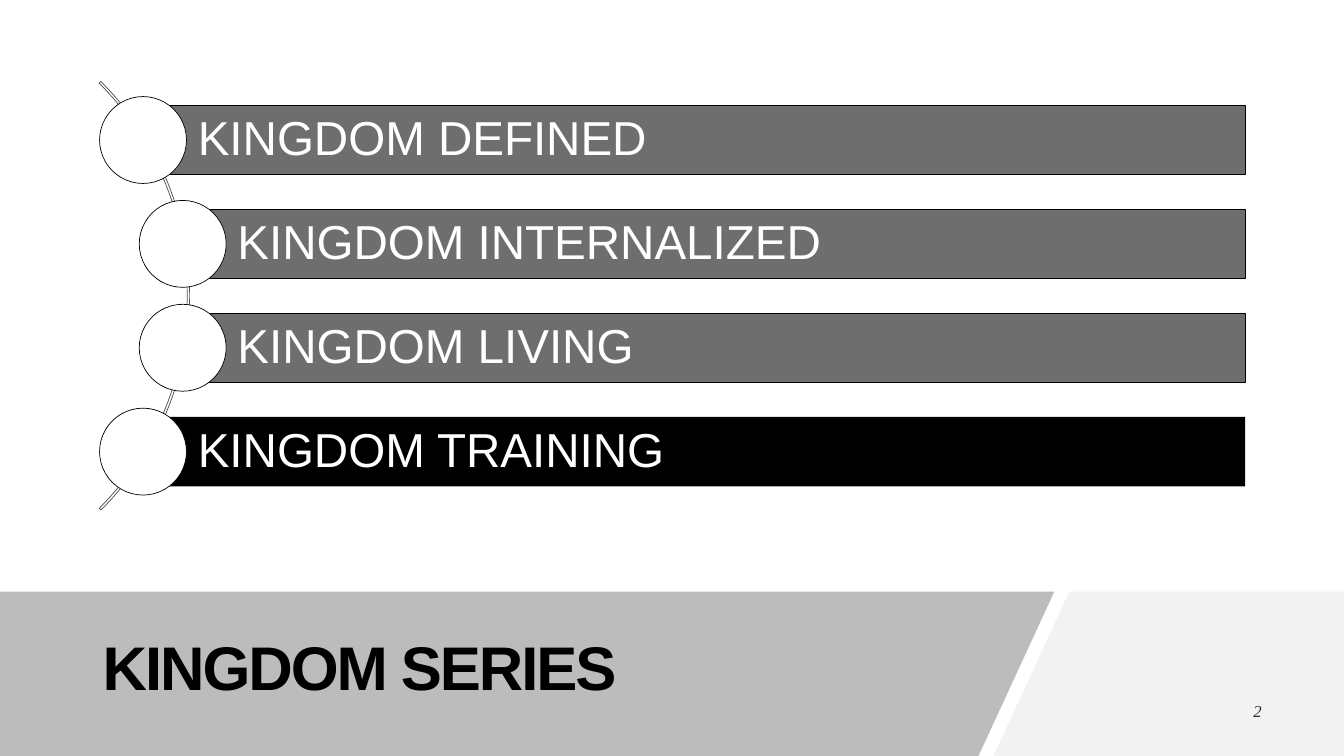
from pptx import Presentation
from pptx.dml.color import RGBColor
from pptx.enum.shapes import MSO_SHAPE as Preset
from pptx.enum.text import MSO_ANCHOR as Anchor, PP_ALIGN as Align
from pptx.oxml.ns import qn
from pptx.util import Cm, Pt
from lxml.etree import SubElement

BLACK = RGBColor(0x00, 0x00, 0x00)
WHITE = RGBColor(0xFF, 0xFF, 0xFF)
BAR_GRAY = RGBColor(0x6E, 0x6E, 0x6E)
ARC_GRAY = RGBColor(0x4D, 0x4D, 0x4D)
BAND_GRAY = RGBColor(0x59, 0x59, 0x59)
CORNER_GRAY = RGBColor(0xF2, 0xF2, 0xF2)

PAGE_WIDTH, PAGE_HEIGHT = 33.87, 19.05
TOPICS = ["KINGDOM DEFINED", "KINGDOM INTERNALIZED", "KINGDOM LIVING", "KINGDOM TRAINING"]


def set_alpha(fill_owner, percent):
    color = next(fill_owner.iter(qn("a:srgbClr")))
    SubElement(color, qn("a:alpha"), val=str(percent * 1000))


def style_shape(shape, fill=None, line=None, width=0.5):
    shape.shadow.inherit = False
    if fill is None:
        shape.fill.background()
    else:
        shape.fill.solid()
        shape.fill.fore_color.rgb = fill
    if line is None:
        shape.line.fill.background()
    else:
        shape.line.color.rgb = line
        shape.line.width = Pt(width)


def write_text(shape, text, size, color, font="Arial", align=Align.LEFT):
    frame = shape.text_frame
    frame.word_wrap = True
    frame.vertical_anchor = Anchor.MIDDLE
    frame.text = text
    para = frame.paragraphs[0]
    para.alignment = align
    para.line_spacing = 0.9
    span = para.runs[0]
    span.font.name = font
    span.font.size = Pt(size)
    span.font.color.rgb = color
    return span


def add_polygon(page, points, fill):
    corners = [(Cm(x), Cm(y)) for x, y in points]
    builder = page.shapes.build_freeform(*corners[0])
    builder.add_line_segments(corners[1:], close=True)
    shape = builder.convert_to_shape()
    style_shape(shape, fill)
    return shape


def add_footer(page, left, top, width, height):
    right, bottom = left + width, top + height
    slant, gap, band_right = 1.91, 0.38, left + 26.57

    # Pale corner and translucent title band with parallel slanted edges
    corner_left = band_right + gap
    add_polygon(page, [(corner_left, top), (right, top), (right, bottom),
                       (corner_left - slant, bottom)], CORNER_GRAY)
    band = add_polygon(page, [(left, top), (band_right, top),
                              (band_right - slant, bottom), (left, bottom)], BAND_GRAY)
    set_alpha(band.fill._xPr, 40)

    # Title
    title = page.shapes.add_textbox(Cm(left + 2.34), Cm(top + 0.46), Cm(22.43), Cm(3.05))
    span = write_text(title, "KINGDOM SERIES", 44, BLACK)
    span.font.bold = True
    span.font._element.set("spc", "-150")

    # Page number
    number = page.shapes.add_textbox(Cm(right - 5.55), Cm(top + 2.49), Cm(3.73), Cm(1.02))
    span = write_text(number, "2", 12, BLACK, "Times New Roman", Align.RIGHT)
    span.font.italic = True
    set_alpha(span.font._element, 80)
    number.text_frame.paragraphs[0].line_spacing = 1.0


def add_topic_list(page, left, top, width, height):
    pitch = height / len(TOPICS)
    bar_height, dot_size, inner_shift = 1.75, 2.19, 1.0
    right = left + width

    # Arc that links the circles
    arc_size = 15.27
    arc = page.shapes.add_shape(Preset.BLOCK_ARC, Cm(left - 13.0),
                                Cm(top + (height - arc_size) / 2), Cm(arc_size), Cm(arc_size))
    for index, value in enumerate((189, 27, 0.004)):
        arc.adjustments[index] = value
    style_shape(arc, line=ARC_GRAY)

    # Bars, each with a circle centred on its left end
    for index, topic in enumerate(TOPICS):
        is_last = index == len(TOPICS) - 1
        is_outer = index == 0 or is_last
        center_x = left + dot_size / 2 + (0 if is_outer else inner_shift)
        center_y = top + (index + 0.5) * pitch

        bar = page.shapes.add_shape(Preset.RECTANGLE, Cm(center_x), Cm(center_y - bar_height / 2),
                                    Cm(right - center_x), Cm(bar_height))
        if is_last:
            style_shape(bar, BLACK)
        else:
            style_shape(bar, BAR_GRAY, BLACK, 0.75)
        write_text(bar, topic, 34, WHITE)
        frame = bar.text_frame
        frame.margin_left = Cm(1.38)
        frame.margin_right = frame.margin_top = frame.margin_bottom = Cm(0.23)

        dot = page.shapes.add_shape(Preset.OVAL, Cm(center_x - dot_size / 2),
                                    Cm(center_y - dot_size / 2), Cm(dot_size), Cm(dot_size))
        style_shape(dot, WHITE, BLACK)


def main():
    deck = Presentation()
    deck.slide_width, deck.slide_height = Cm(PAGE_WIDTH), Cm(PAGE_HEIGHT)
    page = deck.slides.add_slide(deck.slide_layouts[6])
    footer_top = 14.91
    add_footer(page, 0, footer_top, PAGE_WIDTH, PAGE_HEIGHT - footer_top)
    add_topic_list(page, 2.51, 2.22, 28.87, 10.47)
    deck.save("out.pptx")


if __name__ == "__main__":
    main()
